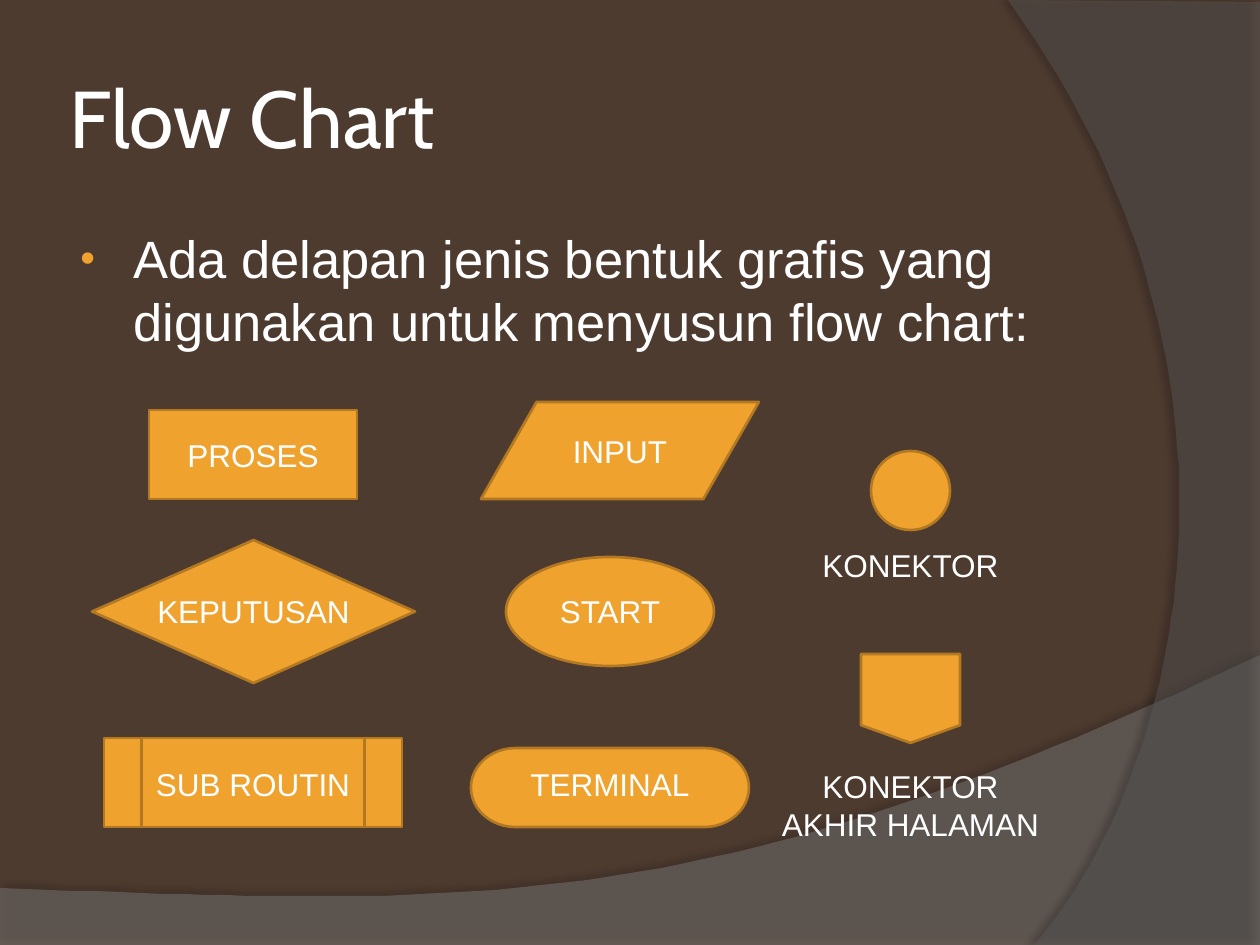
from lxml import etree
from pptx import Presentation
from pptx.dml.color import RGBColor
from pptx.enum.shapes import MSO_SHAPE
from pptx.enum.text import MSO_ANCHOR, PP_ALIGN
from pptx.oxml.ns import qn
from pptx.util import Emu, Pt

PX = 914400 / 126
SLIDE_W, SLIDE_H = 1260, 945
COLORS = {
    "background": "4E3B30",
    "wave": "7F7F7F",
    "arc": "5E5E5E",
    "shadow": "000000",
    "symbol": "F0A22E",
    "outline": "B27822",
    "text": "FFFFFF",
}
CENTER, LEFT = PP_ALIGN.CENTER, PP_ALIGN.LEFT
TOP, MIDDLE = MSO_ANCHOR.TOP, MSO_ANCHOR.MIDDLE

# preset, box of the symbol, label lines, top and width of the label
SYMBOLS = [
    (MSO_SHAPE.FLOWCHART_PROCESS, (149, 410, 208, 89), ["PROSES"], 430, 158),
    (MSO_SHAPE.FLOWCHART_DECISION, (92, 540, 323, 143), ["KEPUTUSAN"], 586, 219),
    (MSO_SHAPE.FLOWCHART_PREDEFINED_PROCESS, (104, 738, 298, 89), ["SUB ROUTIN"], 759, 222),
    (MSO_SHAPE.FLOWCHART_DATA, (481, 402, 278, 97), ["INPUT"], 426, 121),
    (MSO_SHAPE.FLOWCHART_CONNECTOR, (506, 557, 208, 109), ["START"], 586, 127),
    (MSO_SHAPE.FLOWCHART_TERMINATOR, (471, 748, 278, 79), ["TERMINAL"], 759, 186),
    (MSO_SHAPE.FLOWCHART_CONNECTOR, (871, 451, 79, 79), ["KONEKTOR"], 540, 203),
    (MSO_SHAPE.FLOWCHART_OFFPAGE_CONNECTOR, (861, 654, 99, 89),
     ["KONEKTOR", "AKHIR HALAMAN"], 761, 285),
]


def px(value):
    return Emu(round(value * PX))


def rgb(name):
    return RGBColor.from_string(COLORS[name])


def set_all(target, values):
    for name, value in values.items():
        setattr(target, name, value)


def bezier(start, control1, control2, end, steps=60):
    """Points along a cubic curve, both ends included."""
    points = []
    for step in range(steps + 1):
        t = step / steps
        weights = ((1 - t) ** 3, 3 * t * (1 - t) ** 2, 3 * t * t * (1 - t), t ** 3)
        points.append(tuple(
            sum(w * c for w, c in zip(weights, axis))
            for axis in zip(start, control1, control2, end)))
    return points


def add_alpha(color_element, percent):
    etree.SubElement(color_element, qn("a:alpha"), val=str(percent * 1000))


def add_backdrop(slide, points, color, opacity, shadow):
    """Translucent outline; shadow is opacity, blur, distance and direction."""
    builder = slide.shapes.build_freeform(*points[0], scale=PX)
    builder.add_line_segments(points[1:], close=True)
    backdrop = builder.convert_to_shape()
    backdrop.line.fill.background()
    backdrop.fill.solid()
    backdrop.fill.fore_color.rgb = rgb(color)
    properties = backdrop._element.spPr
    add_alpha(properties.find(qn("a:solidFill"))[0], opacity)

    shadow_opacity, blur, distance, direction = shadow
    effects = etree.SubElement(properties, qn("a:effectLst"))
    outer = etree.SubElement(
        effects, qn("a:outerShdw"), blurRad=str(Pt(blur)), dist=str(Pt(distance)),
        dir=str(direction * 60000), algn="ctr", rotWithShape="0")
    shade = etree.SubElement(outer, qn("a:srgbClr"), val=COLORS["shadow"])
    add_alpha(shade, shadow_opacity)


def add_background(slide):
    slide.background.fill.solid()
    slide.background.fill.fore_color.rgb = rgb("background")
    wave = bezier((SLIDE_W, 655), (704, 919), (493, 906), (0, 888))
    add_backdrop(slide, [(0, SLIDE_H), (SLIDE_W, SLIDE_H)] + wave,
                 "wave", 45, (35, 4, 3.5, 270))
    arc = bezier((1034, SLIDE_H), (1178, 780), (1283, 378), (1008, 0))
    add_backdrop(slide, [(SLIDE_W, 2), (SLIDE_W, SLIDE_H)] + arc,
                 "arc", 40, (45, 4, 4, 180))


def add_text(slide, box, lines, size, font="Arial", align=LEFT, anchor=TOP,
             wrap=True, bullet=False):
    frame = slide.shapes.add_textbox(*map(px, box)).text_frame
    set_all(frame, {"word_wrap": wrap, "vertical_anchor": anchor})
    for index, line in enumerate(lines):
        paragraph = frame.paragraphs[0] if index == 0 else frame.add_paragraph()
        paragraph.alignment = align
        if bullet:
            add_bullet(paragraph)
        run = paragraph.add_run()
        run.text = line
        set_all(run.font, {"name": font, "size": Pt(size)})
        run.font.color.rgb = rgb("text")
    return frame


def add_bullet(paragraph):
    properties = paragraph._p.get_or_add_pPr()
    properties.set("marL", str(px(58)))
    properties.set("indent", str(px(-53)))
    color = etree.SubElement(properties, qn("a:buClr"))
    etree.SubElement(color, qn("a:srgbClr"), val=COLORS["symbol"])
    etree.SubElement(properties, qn("a:buSzPct"), val="80000")
    etree.SubElement(properties, qn("a:buFont"), typeface="Arial")
    etree.SubElement(properties, qn("a:buChar"), char="•")


def add_heading(slide, box):
    title = add_text(slide, box, ["Flow Chart"], 46, font="Cabin", anchor=MIDDLE)
    set_all(title, {"margin_left": px(6), "margin_right": px(6)})


def add_introduction(slide, box):
    add_text(slide, box,
             ["Ada delapan jenis bentuk grafis yang digunakan untuk menyusun flow chart:"],
             30, bullet=True)


def add_symbol(slide, preset, box, lines, label_top, label_width):
    """Flow chart symbol with a label centred on its vertical axis."""
    symbol = slide.shapes.add_shape(preset, *map(px, box))
    symbol.shadow.inherit = False
    symbol.fill.solid()
    symbol.fill.fore_color.rgb = rgb("symbol")
    symbol.line.color.rgb = rgb("outline")
    symbol.line.width = Pt(1.5)
    left, _, width, _ = box
    label_left = left + (width - label_width) / 2
    label_height = 12 + 38 * len(lines)
    add_text(slide, (label_left, label_top, label_width, label_height), lines, 18,
             align=CENTER, wrap=False)


def main():
    presentation = Presentation()
    set_all(presentation, {"slide_width": px(SLIDE_W), "slide_height": px(SLIDE_H)})
    slide = presentation.slides.add_slide(presentation.slide_layouts[6])
    add_background(slide)
    add_heading(slide, (63, 38, 1029, 157))
    add_introduction(slide, (63, 220, 1029, 624))
    for symbol in SYMBOLS:
        add_symbol(slide, *symbol)
    presentation.save("out.pptx")


if __name__ == "__main__":
    main()
